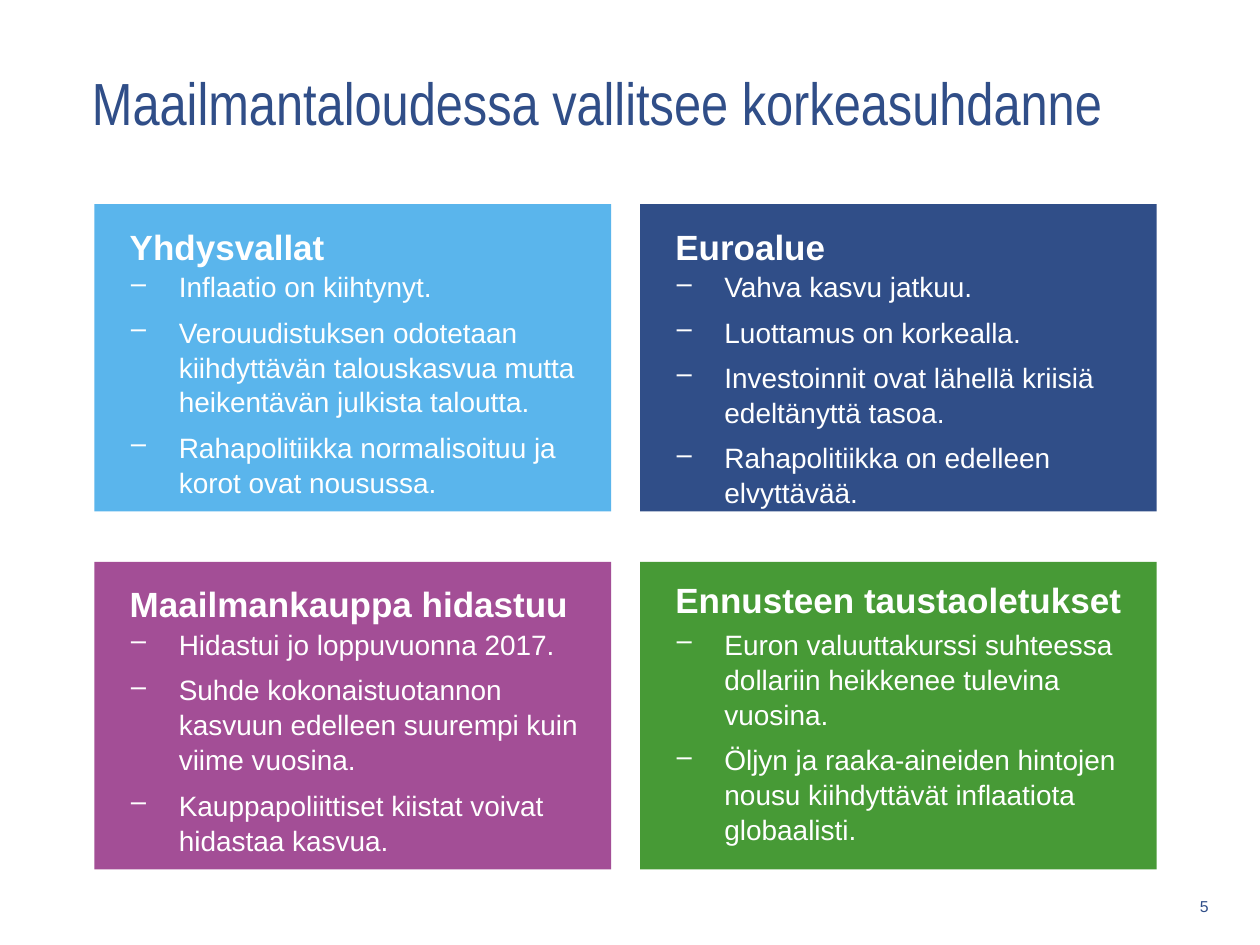
from lxml import etree
from pptx import Presentation
from pptx.dml.color import RGBColor
from pptx.enum import shapes, text
from pptx.oxml.ns import qn
from pptx.util import Inches, Pt

NAVY, WHITE = "304E88", "FFFFFF"
LEFT, TOP = 0.75, 1.62
WIDTH, HEIGHT = 4.1, 2.44
STEP_X, STEP_Y = 4.33, 2.84
HEADING_HEIGHT = 0.55

PANELS = [
    ("Yhdysvallat", "5AB5EC", HEADING_HEIGHT, [
        "Inflaatio on kiihtynyt.",
        "Verouudistuksen odotetaan kiihdyttävän talouskasvua mutta heikentävän julkista taloutta.",
        "Rahapolitiikka normalisoituu ja korot ovat nousussa.",
    ]),
    ("Euroalue", NAVY, HEADING_HEIGHT, [
        "Vahva kasvu jatkuu.",
        "Luottamus on korkealla.",
        "Investoinnit ovat lähellä kriisiä edeltänyttä tasoa.",
        "Rahapolitiikka on edelleen elvyttävää.",
    ]),
    ("Maailmankauppa hidastuu", "A34E96", HEADING_HEIGHT, [
        "Hidastui jo loppuvuonna 2017.",
        "Suhde kokonaistuotannon kasvuun edelleen suurempi kuin viime vuosina.",
        "Kauppapoliittiset kiistat voivat hidastaa kasvua.",
    ]),
    ("Ennusteen taustaoletukset", "479A36", 0.31, [
        "Euron valuuttakurssi suhteessa dollariin heikkenee tulevina vuosina.",
        "Öljyn ja raaka-aineiden hintojen nousu kiihdyttävät inflaatiota globaalisti.",
    ]),
]


def color(value):
    return RGBColor.from_string(value)


def place(box, left, top, width, height):
    box.left, box.top = Inches(left), Inches(top)
    box.width, box.height = Inches(width), Inches(height)


def format_paragraph(para, size, shade, font="Arial", bold=False,
                     align=text.PP_ALIGN.LEFT, after=0, spacing=1.0):
    para.alignment = align
    para.space_after = Pt(after)
    para.line_spacing = spacing
    for span in para.runs:
        span.font.name = font
        span.font.size = Pt(size)
        span.font.bold = bold
        span.font.color.rgb = color(shade)


def prepare_panel_frame(frame, top_margin):
    frame.word_wrap = True
    frame.vertical_anchor = text.MSO_ANCHOR.TOP
    frame.margin_left, frame.margin_top = Inches(0.28), Inches(top_margin)
    frame.margin_right = frame.margin_bottom = Inches(0.2)


def add_dash(para):
    properties = para._p.get_or_add_pPr()
    properties.set("marL", str(Inches(0.39)))
    properties.set("indent", str(-Inches(0.39)))
    etree.SubElement(properties, qn("a:buChar")).set("char", "‒")


def add_panel(page, left, top, fill, items):
    box = page.shapes.add_shape(shapes.MSO_SHAPE.RECTANGLE, Inches(left), Inches(top),
                                Inches(WIDTH), Inches(HEIGHT))
    box.shadow.inherit = False
    box.fill.solid()
    box.fill.fore_color.rgb = color(fill)
    box.line.fill.background()
    frame = box.text_frame
    prepare_panel_frame(frame, 0.51)
    frame.text = "\n".join(items)
    for para in frame.paragraphs:
        add_dash(para)
        format_paragraph(para, 16, WHITE, after=6, spacing=1.04)


def add_heading(page, left, top, height, heading):
    box = page.shapes.add_textbox(Inches(left), Inches(top), Inches(WIDTH), Inches(height))
    prepare_panel_frame(box.text_frame, 0.16)
    box.text_frame.text = heading
    format_paragraph(box.text_frame.paragraphs[0], 20, WHITE, bold=True, after=8, spacing=1.04)


def set_title(page, wording):
    title = page.shapes.title
    place(title, 0.63, 0.16, 8.54, 1.3)
    frame = title.text_frame
    frame.text = wording
    frame.word_wrap = True
    frame.auto_size = text.MSO_AUTO_SIZE.NONE
    frame.vertical_anchor = text.MSO_ANCHOR.MIDDLE
    format_paragraph(frame.paragraphs[0], 34, NAVY, font="Arial Narrow")


def add_page_number(page, number):
    box = page.shapes.add_textbox(Inches(9.17), Inches(7.03), Inches(0.52), Inches(0.32))
    frame = box.text_frame
    frame.word_wrap = True
    frame.vertical_anchor = text.MSO_ANCHOR.MIDDLE
    frame.text = number
    format_paragraph(frame.paragraphs[0], 9, NAVY, align=text.PP_ALIGN.RIGHT)


def main():
    deck = Presentation()
    deck.slide_width, deck.slide_height = Inches(10), Inches(7.5)
    page = deck.slides.add_slide(deck.slide_layouts[5])
    set_title(page, "Maailmantaloudessa vallitsee korkeasuhdanne")
    add_page_number(page, "5")
    for index, (heading, fill, heading_height, items) in enumerate(PANELS):
        row, column = divmod(index, 2)
        left, top = LEFT + column * STEP_X, TOP + row * STEP_Y
        add_panel(page, left, top, fill, items)
        add_heading(page, left, top, heading_height, heading)
    deck.save("out.pptx")


if __name__ == "__main__":
    main()
